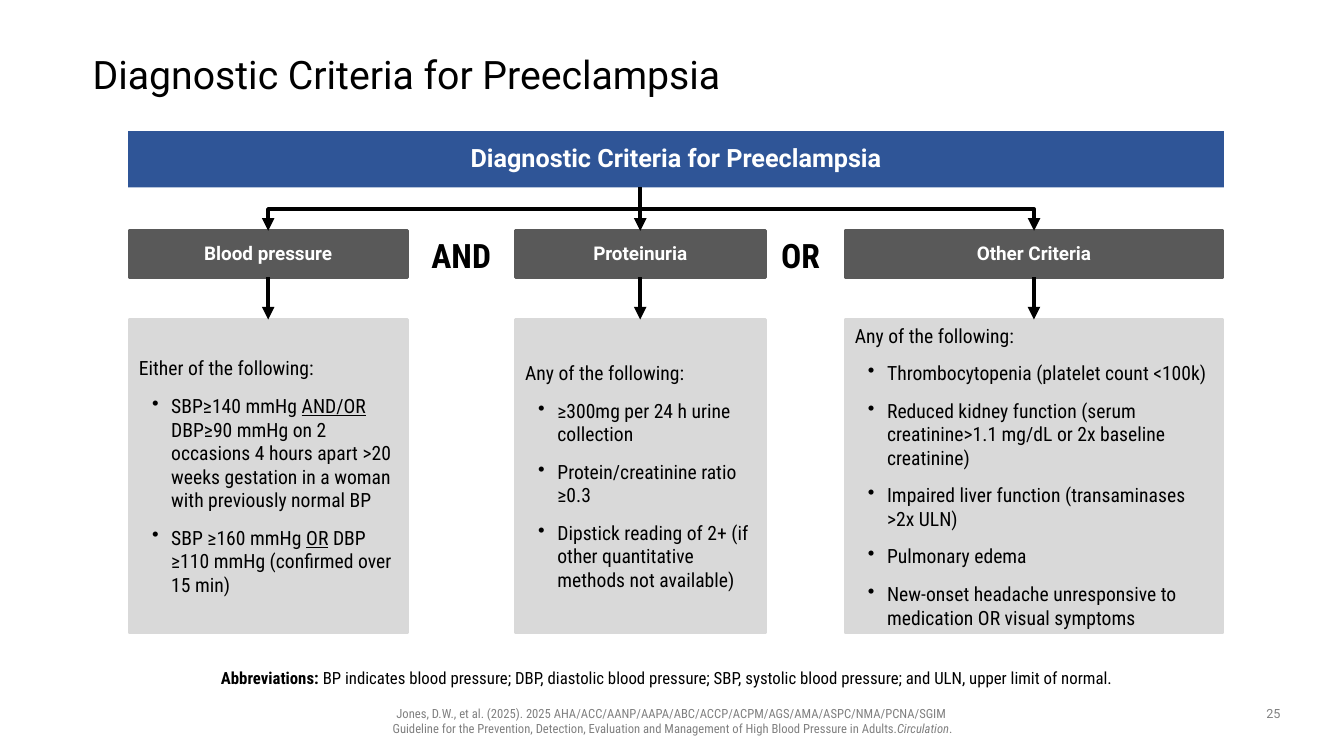
import pptx
import pptx.util
import pptx.dml.color
import pptx.enum.shapes
import pptx.enum.text
import pptx.oxml.ns
import lxml.etree

inch, point = pptx.util.Inches, pptx.util.Pt
Kind = pptx.enum.shapes.MSO_CONNECTOR
Align, Anchor = pptx.enum.text.PP_ALIGN, pptx.enum.text.MSO_ANCHOR
qn = pptx.oxml.ns.qn
hues = {"blue": "2F5597", "dark": "595959", "light": "D9D9D9",
        "black": "000000", "white": "FFFFFF", "grey": "808080"}
tone = {name: pptx.dml.color.RGBColor.from_string(code) for name, code in hues.items()}
plain, slim = "Roboto", "Roboto Condensed"

deck = pptx.Presentation()
deck.slide_width, deck.slide_height = inch(13.33), inch(7.5)
slide = deck.slides.add_slide(deck.slide_layouts[6])
shapes = slide.shapes


def write(shape, paras, face, size, hue, align=Align.LEFT, anchor=Anchor.MIDDLE,
          inset=(0, 0, 0, 0), lead=None):
    """Fill a shape with paragraphs, each a list of (text, style) runs; style is b, i, u or empty."""
    frame = shape.text_frame
    frame.word_wrap = True
    frame.vertical_anchor = anchor
    (frame.margin_left, frame.margin_top,
     frame.margin_right, frame.margin_bottom) = map(inch, inset)
    for n, runs in enumerate(paras):
        para = frame.add_paragraph() if n else frame.paragraphs[0]
        para.alignment = align
        if lead:
            para.line_spacing = lead
        for words, style in runs:
            if words == "\n":
                para.add_line_break()
                continue
            run = para.add_run()
            run.text = words
            font = run.font
            font.name, font.size = face, point(size)
            font.color.rgb = tone[hue]
            font.bold, font.italic, font.underline = (mark == style for mark in "biu")
    return frame


def arrow(kind, start, end):
    line = shapes.add_connector(kind, *map(inch, start + end))
    line.line.color.rgb = tone["black"]
    line.line.width = point(3)
    tail = lxml.etree.SubElement(line.line._get_or_add_ln(), qn("a:tailEnd"))
    tail.set("type", "triangle")
    lxml.etree.SubElement(line._element.spPr, qn("a:effectLst"))
    return line


# Rows as (top, height); columns as (left, width)
banner, heads, cards = (1.3, 0.56), (2.29, 0.46), (3.17, 3.11)
foot = banner[0] + banner[1]
cols = [
    (1.28, 2.76, "Blood pressure", [
        [("Either of the following:", "")],
        [("SBP≥140 mmHg ", ""), ("AND/OR ", "u"),
         ("DBP≥90 mmHg on 2 occasions 4 hours apart >20 weeks gestation "
          "in a woman with previously normal BP", "")],
        [("SBP ≥160 mmHg ", ""), ("OR", "u"),
         (" DBP ≥110 mmHg (confirmed over 15 min)", "")]]),
    (5.11, 2.48, "Proteinuria", [
        [("Any of the following:", "")],
        [("≥300mg per 24 h urine collection", "")],
        [("Protein/creatinine ratio ≥0.3", "")],
        [("Dipstick reading of 2+ (if other quantitative methods not available)", "")]]),
    (8.38, 3.75, "Other Criteria", [
        [("Any of the following:", "")],
        [("Thrombocytopenia (platelet count <100k)", "")],
        [("Reduced kidney function (serum creatinine>1.1 mg/dL or 2x baseline creatinine)", "")],
        [("Impaired liver function (transaminases >2x ULN)", "")],
        [("Pulmonary edema", "")],
        [("New-onset headache unresponsive to medication OR visual symptoms", "")]]),
]
mids = [left + width / 2 for left, width, *rest in cols]

# Banner, headers and cards
boxes = [(1.27, 10.87, banner, "blue")]
for left, width, *rest in cols:
    boxes += [(left, width, heads, "dark"), (left, width, cards, "light")]
drawn = []
for left, width, (top, height), hue in boxes:
    box = shapes.add_shape(pptx.enum.shapes.MSO_SHAPE.RECTANGLE,
                           *map(inch, (left, top, width, height)))
    box.shadow.inherit = False
    box.fill.solid()
    box.fill.fore_color.rgb = tone[hue]
    if hue == "blue":
        box.line.fill.background()
    else:
        box.line.color.rgb = tone[hue]
        box.line.width = point(2)
    drawn.append(box)

title = "Diagnostic Criteria for Preeclampsia"
write(drawn[0], [[(title, "b")]], plain, 18, "white", Align.CENTER, lead=0.9)
for (left, width, name, paras), head, card in zip(cols, drawn[1::2], drawn[2::2]):
    write(head, [[(name, "b")]], plain, 13.5, "white", Align.CENTER, lead=0.9)
    frame = write(card, paras, slim, 14, "black", inset=(0.1, 0, 0.1, 0))
    for n, para in enumerate(frame.paragraphs):
        if n:
            props = para._p.get_or_add_pPr()
            props.set("marL", str(inch(0.32)))
            props.set("indent", str(inch(-0.19)))
            lxml.etree.SubElement(props, qn("a:buChar")).set("char", "•")
        para.space_after = point(10)

# Arrows from banner to headers, and from headers to cards
hub = mids[1]
drop = heads[0] - foot
for mid, head, card in zip(mids, drawn[1::2], drawn[2::2]):
    if mid == hub:
        stem = arrow(Kind.STRAIGHT, (hub, foot), (hub, heads[0]))
        stem.end_connect(head, 0)
    else:
        # An elbow lies on its side, then turns about its centre to leave downwards
        side = 1 if mid < hub else -1
        x, y, span = (mid + hub) / 2, foot + drop / 2, abs(mid - hub)
        elbow = arrow(Kind.ELBOW, (x - side * drop / 2, y - span / 2),
                      (x + side * drop / 2, y + span / 2))
        elbow._element.spPr.find(qn("a:xfrm")).set("rot", str(side % 4 * 90 * 60000))
    link = arrow(Kind.STRAIGHT, (mid, heads[0] + heads[1]), (mid, cards[0]))
    link.begin_connect(head, 2)
    link.end_connect(card, 0)

# Free text: place, paragraphs, face, size, hue, align, anchor, inset, line spacing
pad = (0.1, 0.05, 0.1, 0.05)
notes = [
    ((0.92, 0.4, 11.5, 0.72), [(title, "")], plain, 28, "black",
     Align.LEFT, Anchor.MIDDLE, (0, 0, 0, 0), 0.9),
    ((1.88, 6.42, 9.57, 0.46),
     [("Abbreviations: ", "b"),
      ("BP indicates blood pressure; DBP, diastolic blood pressure; SBP, systolic blood "
       "pressure; and ULN, upper limit of normal.", "")],
     slim, 12, "black", Align.CENTER, Anchor.BOTTOM, (0, 0.05, 0.1, 0.05), 0.9),
    ((2.36, 6.95, 8.62, 0.4),
     [("Jones, D.W., et al. (2025). 2025 AHA/ACC/AANP/AAPA/ABC/ACCP/ACPM/AGS/AMA/ASPC/"
       "NMA/PCNA/SGIM ", ""), ("\n", ""),
      ("Guideline for the Prevention, Detection, Evaluation and Management of High Blood "
       "Pressure in Adults.", ""), ("Circulation", "i"), (".", "")],
     slim, 9, "grey", Align.CENTER, Anchor.TOP, pad, None),
    ((12.42, 6.95, 0.42, 0.26), [("25", "")], plain, 9, "grey",
     Align.CENTER, Anchor.TOP, pad, None),
]
for place, runs, *look in notes:
    write(shapes.add_textbox(*map(inch, place)), [runs], *look)

for word, left, width in [("AND", 4.18, 0.82), ("OR", 7.65, 0.61)]:
    label = shapes.add_textbox(*map(inch, (left, 2.28, width, 0.5)))
    frame = write(label, [[(word, "b")]], slim, 24, "black", anchor=Anchor.TOP, inset=pad)
    frame.word_wrap = False

deck.save("out.pptx")
